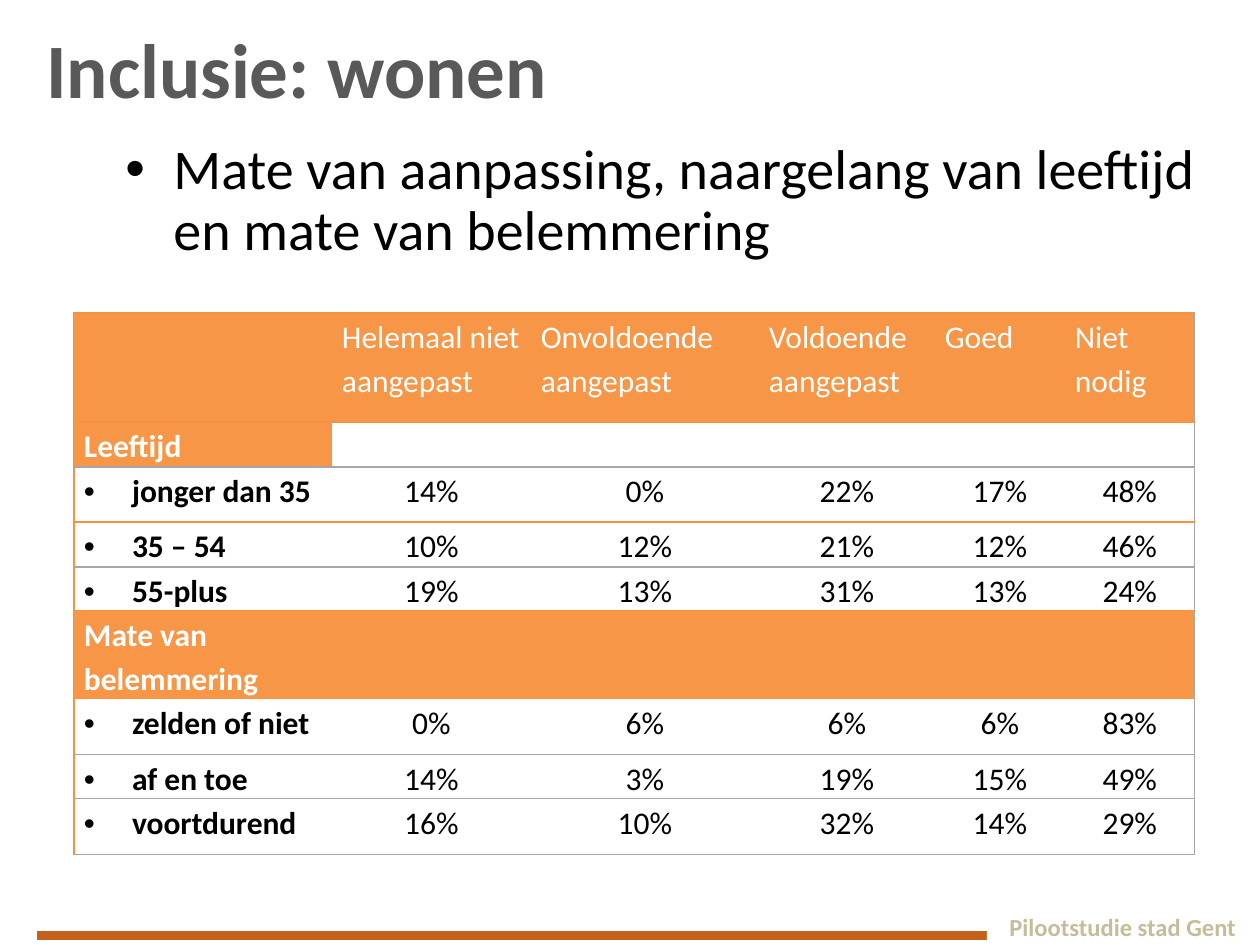
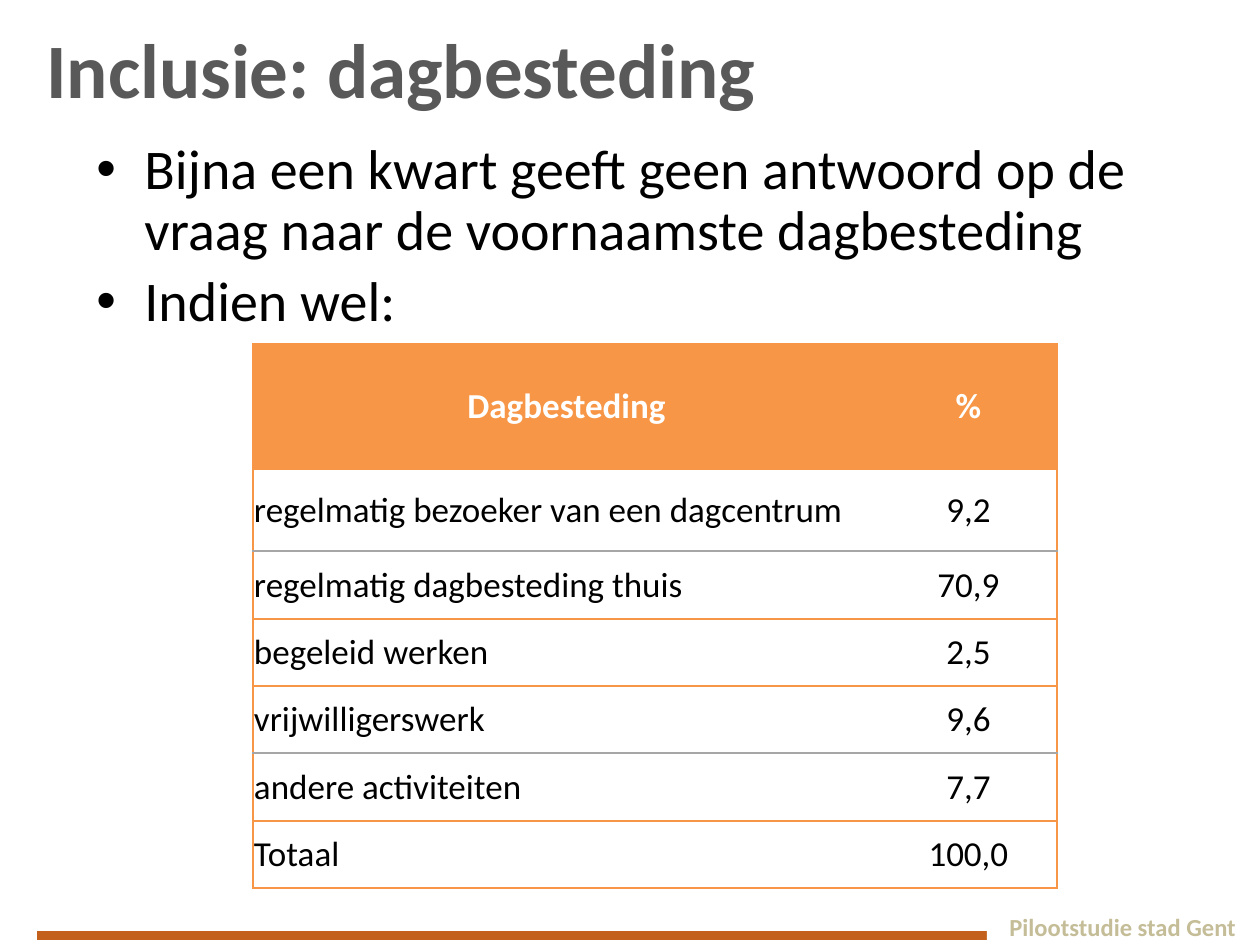
from itertools import accumulate

from lxml import etree
from pptx import Presentation
from pptx.dml.color import RGBColor
from pptx.enum.shapes import MSO_SHAPE
from pptx.enum.text import MSO_ANCHOR, PP_ALIGN
from pptx.oxml.ns import qn
from pptx.util import Pt

RECT = MSO_SHAPE.RECTANGLE
LEFT, CENTER = PP_ALIGN.LEFT, PP_ALIGN.CENTER
TOP, MIDDLE = MSO_ANCHOR.TOP, MSO_ANCHOR.MIDDLE

PX = 914400 / 126
FONT = "Calibri"
BLACK, WHITE, GREY, BEIGE = "000000", "FFFFFF", "595959", "C4BD97"
ORANGE, RULE, THIN, BAND = "F79646", "F69240", "A6A6A6", "C3611C"
NO_STYLE = "{2D5ABB26-0587-4C30-8999-92F81FD0307C}"
INDENT = 48
FOOTER = "Pilootstudie stad Gent"

# Rows: kind, texts, height, colour of the rule below
HOUSING = dict(
    left=74, top=313, widths=[258, 199, 228, 176, 130, 130],
    size=18, spacing=1.15, anchor=TOP, margins=(10, 0, 10, 0), line=0.75,
    right=THIN,
    rows=[
        ("head", ["", "Helemaal niet\naangepast", "Onvoldoende\naangepast",
                  "Voldoende\naangepast", "Goed", "Niet\nnodig"], 109, RULE),
        ("label", ["Leeftijd"], 45, THIN),
        ("item", ["jonger dan 35", "14%", "0%", "22%", "17%", "48%"], 55, RULE),
        ("item", ["35 – 54", "10%", "12%", "21%", "12%", "46%"], 45, THIN),
        ("item", ["55-plus", "19%", "13%", "31%", "13%", "24%"], 44, RULE),
        ("group", ["Mate van belemmering"], 88, RULE),
        ("item", ["zelden of niet", "0%", "6%", "6%", "6%", "83%"], 56, THIN),
        ("item", ["af en toe", "14%", "3%", "19%", "15%", "49%"], 44, THIN),
        ("item", ["voortdurend", "16%", "10%", "32%", "14%", "29%"], 56, THIN),
    ])
ACTIVITIES = dict(
    left=253, top=344, widths=[627, 177],
    size=20, spacing=1.0, anchor=MIDDLE, margins=(1, 1, 1, 0), line=1,
    right=ORANGE,
    rows=[
        ("title", ["Dagbesteding", "%"], 125, ORANGE),
        ("plain", ["regelmatig bezoeker van een dagcentrum", "9,2"], 82, THIN),
        ("plain", ["regelmatig dagbesteding thuis", "70,9"], 68, ORANGE),
        ("plain", ["begeleid werken", "2,5"], 67, ORANGE),
        ("plain", ["vrijwilligerswerk", "9,6"], 67, THIN),
        ("plain", ["andere activiteiten", "7,7"], 68, ORANGE),
        ("plain", ["Totaal", "100,0"], 67, ORANGE),
    ])
SLIDES = [
    ("Inclusie: wonen", 113,
     ["Mate van aanpassing, naargelang van leeftijd en mate van belemmering"],
     HOUSING),
    ("Inclusie: dagbesteding", 84,
     ["Bijna een kwart geeft geen antwoord op de vraag naar de voornaamste dagbesteding",
      "Indien wel:"], ACTIVITIES),
]

# Per kind: (first column, other columns)
FILLS = {"head": (ORANGE, ORANGE), "label": (ORANGE, WHITE),
         "group": (ORANGE, ORANGE), "title": (ORANGE, ORANGE)}
ALIGNS = {"head": (LEFT, LEFT), "title": (CENTER, CENTER)}
BOLD = {"label": (True, False), "group": (True, False),
        "item": (True, False), "title": (True, True)}


def px(*lengths):
    return [round(n * PX) for n in lengths]


def rgb(value):
    return RGBColor.from_string(value)


def paint(fill, color):
    fill.solid()
    fill.fore_color.rgb = rgb(color)


def add_bullet(p):
    pPr = p._p.get_or_add_pPr()
    indent, = px(INDENT)
    pPr.set("marL", str(indent))
    pPr.set("indent", str(-indent))
    etree.SubElement(pPr, qn("a:buFont"), typeface="Arial")
    etree.SubElement(pPr, qn("a:buChar"), char="•")


def write(tf, lines, size, color, bold=False, align=LEFT, spacing=1.0,
          bullet=False, gap=0):
    for i, line in enumerate(lines):
        p = tf.paragraphs[0] if i == 0 else tf.add_paragraph()
        p.alignment, p.line_spacing = align, spacing
        if i and gap:
            p.space_before = Pt(gap)
        if bullet:
            add_bullet(p)
        r = p.add_run()
        r.text = line
        for name, value in dict(name=FONT, size=Pt(size), bold=bold).items():
            setattr(r.font, name, value)
        r.font.color.rgb = rgb(color)


def add_text(s, box, lines, anchor=TOP, wrap=True, **style):
    tf = s.shapes.add_textbox(*px(*box)).text_frame
    tf.word_wrap, tf.vertical_anchor = wrap, anchor
    write(tf, lines, **style)


def add_bar(s, box, color, outline=None):
    sp = s.shapes.add_shape(RECT, *px(*box))
    sp.shadow.inherit = False
    paint(sp.fill, color)
    if outline:
        sp.line.color.rgb = rgb(outline)
        sp.line.width = Pt(2.25)
    else:
        sp.line.fill.background()


def add_borders(cell, width, colors):
    """Draw the sides given as a dict of L, R, T, B to colour."""
    tcPr = cell._tc.get_or_add_tcPr()
    for side in "LRTB":
        if side in colors:
            ln = etree.SubElement(tcPr, qn("a:ln" + side), w=str(Pt(width)))
            fill = etree.SubElement(ln, qn("a:solidFill"))
            etree.SubElement(fill, qn("a:srgbClr"), val=colors[side])


def add_table(s, t):
    rows, widths = t["rows"], t["widths"]
    heights = [row[2] for row in rows]
    box = t["left"], t["top"], list(accumulate(widths))[-1], sum(heights)
    tbl = s.shapes.add_table(len(rows), len(widths), *px(*box)).table
    tbl.first_row = tbl.horz_banding = False
    tbl._tbl.tblPr.find(qn("a:tableStyleId")).text = NO_STYLE
    for col, width in zip(tbl.columns, px(*widths)):
        col.width = width
    above = rows[0][3]
    for i, (kind, texts, height, below) in enumerate(rows):
        tbl.rows[i].height, = px(height)
        for j in range(len(widths)):
            cell, rest = tbl.cell(i, j), min(j, 1)
            sides = {"T": above, "B": below}
            if j == 0:
                sides["L"] = rows[0][3]
            if j == len(widths) - 1:
                sides["R"] = t["right"]
            add_borders(cell, t["line"], sides)
            fill = FILLS.get(kind, (WHITE, WHITE))[rest]
            paint(cell.fill, fill)
            cell.vertical_anchor = t["anchor"]
            for side, margin in zip(("left", "top", "right", "bottom"),
                                    px(*t["margins"])):
                setattr(cell, "margin_" + side, margin)
            if j < len(texts) and texts[j]:
                write(cell.text_frame, texts[j].split("\n"), t["size"],
                      BLACK if fill == WHITE else WHITE,
                      BOLD.get(kind, (False, False))[rest],
                      ALIGNS.get(kind, (LEFT, CENTER))[rest],
                      t["spacing"], bullet=kind == "item" and j == 0)
        above = below


def add_slide(prs, title, body_left, bullets, table):
    s = prs.slides.add_slide(prs.slide_layouts[6])
    add_bar(s, (35, 929, 1062, 13), BAND, WHITE)
    add_bar(s, (987, 920, 238, 25), WHITE)
    add_text(s, (997, 906, 258, 43), [FOOTER], wrap=False,
             size=14, color=BEIGE, bold=True)
    add_text(s, (34, 0, 1168, 135), [title], anchor=MIDDLE,
             size=44, color=GREY, bold=True)
    add_text(s, (body_left, 135, 1225 - body_left, 726), bullets,
             size=32, color=BLACK, spacing=0.9, bullet=True, gap=6.4)
    add_table(s, table)


def main():
    prs = Presentation()
    prs.slide_width, prs.slide_height = px(1260, 945)
    for content in SLIDES:
        add_slide(prs, *content)
    prs.save("out.pptx")


if __name__ == "__main__":
    main()
